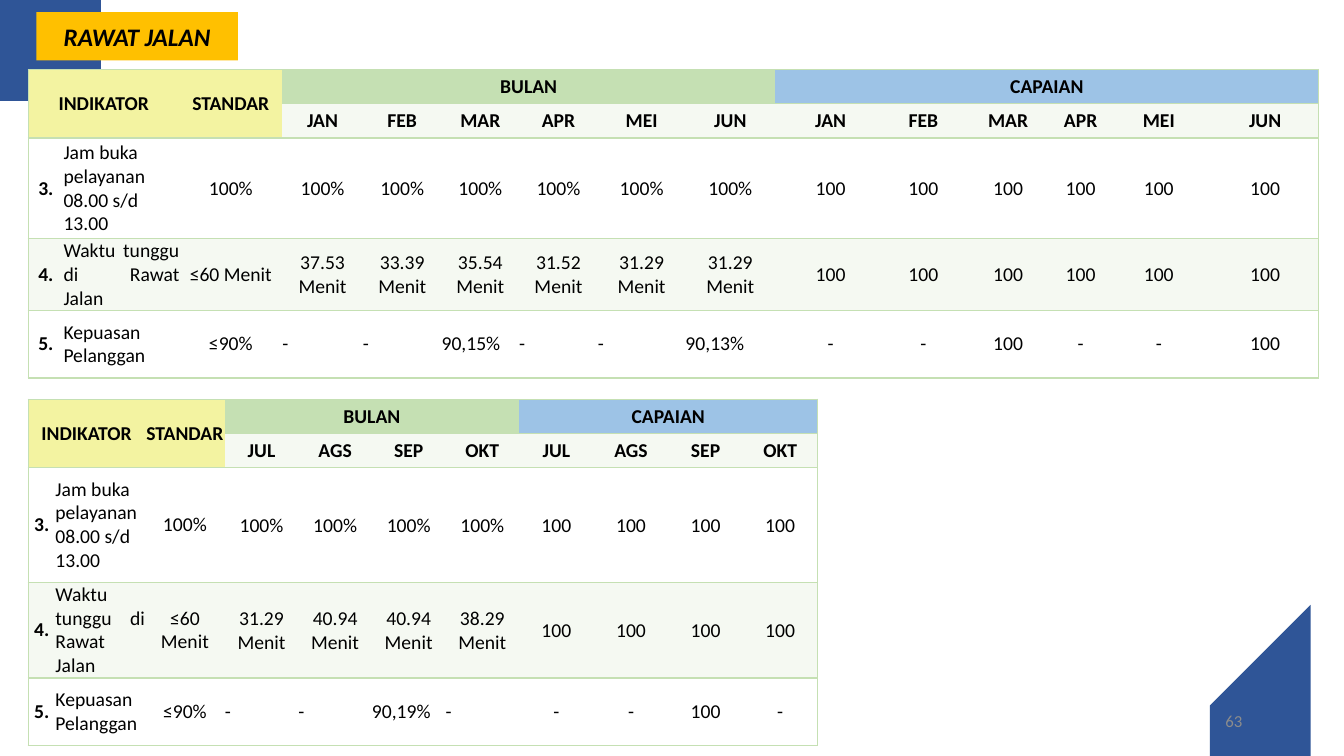
from lxml import etree
from pptx import Presentation
from pptx.dml.color import RGBColor
from pptx.enum.text import MSO_ANCHOR, PP_ALIGN
from pptx.oxml.ns import qn
from pptx.util import Inches, Pt

NAVY = RGBColor(0x2F, 0x55, 0x97)
AMBER = RGBColor(0xFF, 0xC0, 0x00)
YELLOW = RGBColor(0xF3, 0xF3, 0xA1)
GREEN = RGBColor(0xC5, 0xE0, 0xB3)
BLUE = RGBColor(0x9D, 0xC3, 0xE6)
PALE = RGBColor(0xF5, 0xF9, 0xF2)
WHITE = RGBColor(0xFF, 0xFF, 0xFF)
BLACK = RGBColor(0, 0, 0)
GREY = RGBColor(0x8C, 0x8C, 0x8C)
FONT = "Calibri"
NO_STYLE = "{2D5ABB26-0587-4C30-8999-92F81FD0307C}"
NBSP = chr(160)

# number, indicator lines, standard, alignment of indicator, alignment of months, inset
INDICATORS = [
    ("3.", ["Jam buka pelayanan ", "08.00 s/d 13.00"], "100%", PP_ALIGN.LEFT, PP_ALIGN.CENTER, 0.01),
    ("4.", ["Waktu tunggu di Rawat Jalan" + NBSP], "≤60 Menit", PP_ALIGN.JUSTIFY, PP_ALIGN.CENTER, 0.01),
    ("5.", ["Kepuasan Pelanggan"], "≤90%", PP_ALIGN.JUSTIFY, PP_ALIGN.LEFT, 0),
]
TABLES = [
    {
        "top": 0.69,
        "cols": [0.35, 1.15, 1.02, 0.8, 0.78, 0.77, 0.78, 0.87, 0.89,
                 1.1, 0.74, 0.94, 0.5, 1.05, 1.06],
        "rows": [0.34, 0.34, 1, 0.67, 0.67],
        "months": ["JAN", "FEB", "MAR", "APR", "MEI", "JUN"],
        "results": [
            ["100%"] * 6,
            ["37.53 Menit", "33.39 Menit", "35.54 Menit", "31.52 Menit", "31.29 Menit", "31.29 Menit"],
            ["-", "-", "90,15%", "-", "-", "90,13%"],
        ],
        "scores": [["100"] * 6, ["100"] * 6, ["-", "-", "100", "-", "-", "100"]],
    },
    {
        "top": 3.96,
        "cols": [0.27, 0.89, 0.79] + [0.73] * 4 + [0.74] * 4,
        "rows": [0.34, 0.34, 1.14, 0.67, 0.67],
        "months": ["JUL", "AGS", "SEP", "OKT"],
        "results": [
            ["100%"] * 4,
            ["31.29 Menit", "40.94 Menit", "40.94 Menit", "38.29 Menit"],
            ["-", "-", "90,19%", "-"],
        ],
        "scores": [["100"] * 4, ["100"] * 4, ["-", "-", "100", "-"]],
    },
]
# A pair is a line end; three pairs are a Bézier curve
CORNERS = [
    [(13.33, 7.5), (12.11, 7.5), (12.04, 7.36),
     ((11.9, 7.06), (12.03, 6.69), (12.34, 6.55)), (13.32, 6.09)],
    [(0, 0), (1.22, 0), (1.29, 0.15),
     ((1.43, 0.46), (1.29, 0.83), (0.99, 0.97)), (0, 1.42)],
]


def outline(steps, pieces=16):
    """Turn line ends and Bézier curves into a list of points."""
    points = []
    for step in steps:
        if len(step) == 2:
            points.append(step)
            continue
        curve = [points[-1], *step]
        for i in range(1, pieces + 1):
            t = i / pieces
            weights = ((1 - t) ** 3, 3 * t * (1 - t) ** 2, 3 * t * t * (1 - t), t ** 3)
            points.append(tuple(sum(w * p[axis] for w, p in zip(weights, curve))
                                for axis in (0, 1)))
    return points


def add_corner(slide, steps):
    start, *rest = outline(steps)
    builder = slide.shapes.build_freeform(*start, scale=Inches(1))
    builder.add_line_segments(rest, close=True)
    sp = builder.convert_to_shape()
    sp.shadow.inherit = False
    sp.fill.solid()
    sp.fill.fore_color.rgb = NAVY
    sp.line.fill.background()


def write(tf, lines, size, color=BLACK, bold=False, italic=False, align=PP_ALIGN.CENTER):
    p = tf.paragraphs[0]
    p.alignment = align
    for i, line in enumerate(lines):
        if i:
            p.add_line_break()
        r = p.add_run()
        r.text = line
        r.font.name, r.font.size = FONT, Pt(size)
        r.font.bold, r.font.italic = bold, italic
        r.font.color.rgb = color


def format_cell(cell, fill, sides, inset=0):
    tcPr = cell._tc.get_or_add_tcPr()
    for side in "LRTB":
        ln = etree.SubElement(tcPr, qn(f"a:ln{side}"), w=str(Pt(1)))
        if side in sides:
            solid = etree.SubElement(ln, qn("a:solidFill"))
            etree.SubElement(solid, qn("a:srgbClr"), val=str(GREEN))
        else:
            etree.SubElement(ln, qn("a:noFill"))
    cell.fill.solid()
    cell.fill.fore_color.rgb = fill
    cell.vertical_anchor = MSO_ANCHOR.MIDDLE
    cell.margin_left = cell.margin_right = cell.margin_top = Inches(inset)
    cell.margin_bottom = 0


def add_indicator_table(slide, data):
    cols, rows, months = data["cols"], data["rows"], data["months"]
    n = len(months)
    frame = slide.shapes.add_table(len(rows), len(cols), Inches(0.28), Inches(data["top"]),
                                   Inches(sum(cols)), Inches(sum(rows)))
    table = frame.table
    table.first_row = table.horz_banding = False
    table._tbl.tblPr.find(qn("a:tableStyleId")).text = NO_STYLE
    for column, width in zip(table.columns, cols):
        column.width = Inches(width)
    for row, height in zip(table.rows, rows):
        row.height = Inches(height)

    # text, row, column, last row, last column, fill
    headers = [("INDIKATOR", 0, 0, 1, 1, YELLOW), ("STANDAR", 0, 2, 1, 2, YELLOW),
               ("BULAN", 0, 3, 0, 2 + n, GREEN), ("CAPAIAN", 0, 3 + n, 0, 2 + 2 * n, BLUE)]
    headers += [(month, 1, c, 1, c, PALE) for c, month in enumerate(months * 2, 3)]
    for text, top, left, bottom, right, fill in headers:
        for r in range(top, bottom + 1):
            for c in range(left, right + 1):
                sides = "TB" + "L" * (left == 0) + "R" * (right == len(cols) - 1)
                format_cell(table.cell(r, c), fill, sides)
        origin = table.cell(top, left)
        if (top, left) != (bottom, right):
            origin.merge(table.cell(bottom, right))
        write(origin.text_frame, [text], 14, bold=True)

    body = zip(INDICATORS, data["results"], data["scores"])
    for r, (indicator, results, scores) in enumerate(body, 2):
        number, label, standard, label_align, month_align, inset = indicator
        texts = [[number], label, [standard]] + [[v] for v in results + scores]
        aligns = ([PP_ALIGN.CENTER, label_align, PP_ALIGN.CENTER]
                  + [month_align] * n + [PP_ALIGN.CENTER] * n)
        for c, (lines, align) in enumerate(zip(texts, aligns)):
            sides = "TB" + "L" * (c == 0) + "R" * (c == len(cols) - 1)
            cell = table.cell(r, c)
            format_cell(cell, PALE if r % 2 else WHITE, sides, inset if c > 2 else 0)
            write(cell.text_frame, lines, 14, bold=c == 0, align=align)


def add_title(s):
    title = s.shapes.title
    title.left, title.top, title.width, title.height = map(Inches, (0.36, 0.12, 2, 0.48))
    geom = etree.SubElement(title._element.spPr, qn("a:prstGeom"), prst="round2DiagRect")
    etree.SubElement(geom, qn("a:avLst"))
    title.fill.solid()
    title.fill.fore_color.rgb = AMBER
    title.text_frame.vertical_anchor = MSO_ANCHOR.MIDDLE
    write(title.text_frame, ["RAWAT JALAN"], 18, bold=True, italic=True)
    s.shapes._spTree.append(title._element)  # in front of the corner


def main():
    prs = Presentation()
    prs.slide_width, prs.slide_height = Inches(13.33), Inches(7.5)
    s = prs.slides.add_slide(prs.slide_layouts[5])
    for steps in CORNERS:
        add_corner(s, steps)
    page = s.shapes.add_textbox(Inches(9.42), Inches(6.95), Inches(3), Inches(0.4))
    page.text_frame.word_wrap = True
    page.text_frame.vertical_anchor = MSO_ANCHOR.MIDDLE
    write(page.text_frame, ["63"], 12, GREY, align=PP_ALIGN.RIGHT)
    add_title(s)
    for data in TABLES:
        add_indicator_table(s, data)
    prs.save("out.pptx")


if __name__ == "__main__":
    main()
